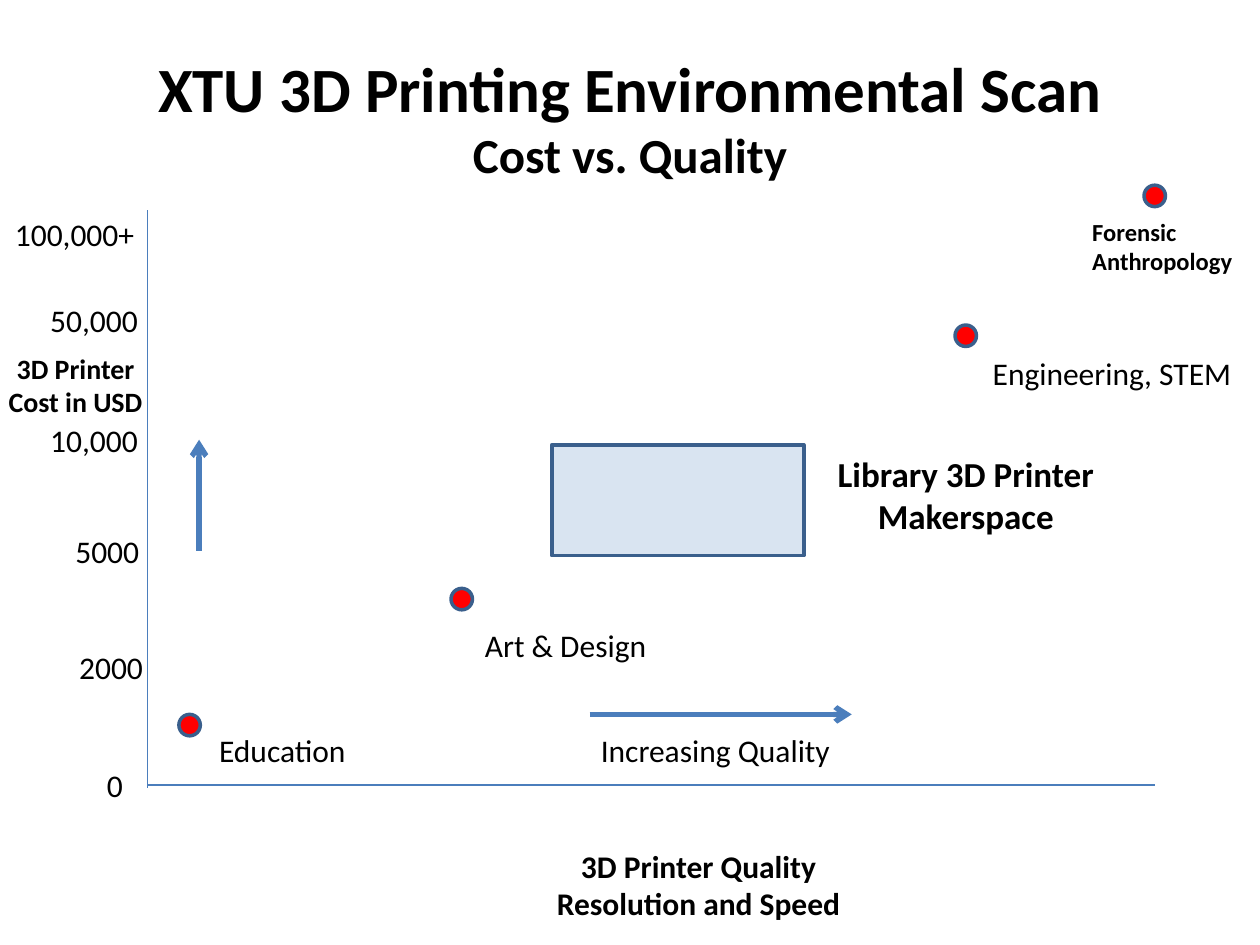
from lxml import etree
from pptx import Presentation
from pptx.dml.color import RGBColor
from pptx.enum.shapes import MSO_CONNECTOR, MSO_SHAPE
from pptx.enum.text import MSO_ANCHOR, PP_ALIGN
from pptx.oxml.ns import qn
from pptx.util import Inches, Pt

LEFT, CENTER = PP_ALIGN.LEFT, PP_ALIGN.CENTER
TOP, MIDDLE = MSO_ANCHOR.TOP, MSO_ANCHOR.MIDDLE
RECT, OVAL = MSO_SHAPE.RECTANGLE, MSO_SHAPE.OVAL
STRAIGHT = MSO_CONNECTOR.STRAIGHT

FONT = "Calibri"
COLORS = {
    "text": "000000",
    "line": "4B7EBC",
    "outline": "3A5F8C",
    "dot": "FF0000",
    "range": "4F81BD",
}
DOT = 0.17
AXIS_X, AXIS_Y = 1.17, 6.23


def rgb(name):
    return RGBColor.from_string(COLORS[name])


def add_text(s, text, x, y, w, h, size=18, bold=False, align=LEFT,
             anchor=TOP, wrap=False, sizes=None):
    tf = s.shapes.add_textbox(Inches(x), Inches(y), Inches(w), Inches(h)).text_frame
    tf.word_wrap = wrap
    tf.vertical_anchor = anchor
    p = tf.paragraphs[0]
    p.alignment = align
    lines = text.split("\n")
    for i, (line, pts) in enumerate(zip(lines, sizes or [size] * len(lines))):
        if i:
            p.add_line_break()
        r = p.add_run()
        r.text = line
        r.font.name = FONT
        r.font.size = Pt(pts)
        r.font.bold = bold
        r.font.color.rgb = rgb("text")


def add_shape(s, kind, x, y, w, h, fill, alpha=None):
    sp = s.shapes.add_shape(kind, Inches(x), Inches(y), Inches(w), Inches(h))
    sp.shadow.inherit = False
    sp.fill.solid()
    sp.fill.fore_color.rgb = rgb(fill)
    sp.line.color.rgb = rgb("outline")
    sp.line.width = Pt(2)
    if alpha:
        clr = sp.fill._xPr.find(qn("a:solidFill"))[0]
        etree.SubElement(clr, qn("a:alpha"), val=str(alpha * 1000))


def add_line(s, x1, y1, x2, y2, width=0.75, arrow=False):
    cn = s.shapes.add_connector(STRAIGHT, Inches(x1), Inches(y1), Inches(x2), Inches(y2))
    cn.line.color.rgb = rgb("line")
    cn.line.width = Pt(width)
    if arrow:
        etree.SubElement(cn.line._get_or_add_ln(), qn("a:tailEnd"), type="arrow")
    etree.SubElement(cn._element.spPr, qn("a:effectLst"))


def add_axes(s):
    add_line(s, AXIS_X, 1.67, AXIS_X, 6.25)
    add_line(s, AXIS_X, AXIS_Y, 9.17, AXIS_Y)
    ticks = [
        ("100,000+", 0.02, 1.66, 1.16),
        ("50,000", 0.3, 2.34, 1),
        ("10,000", 0.3, 3.29, 1),
        ("5000", 0.5, 4.17, 1),
        ("2000", 0.53, 5.09, 1),
        ("0", 0.75, 6.03, 0.42),
    ]
    for text, x, y, w in ticks:
        add_text(s, text, x, y, w, 0.4, wrap=True)
    add_text(s, "3D Printer\nCost in USD", -0.04, 2.74, 1.28, 0.64,
             size=16, bold=True, align=CENTER)
    add_text(s, "3D Printer Quality\nResolution and Speed", 4.31, 6.67, 2.47, 0.71,
             bold=True, align=CENTER)


def add_departments(s):
    for x, y in [(1.42, 5.67), (3.58, 4.67), (7.58, 2.58), (9.08, 1.47)]:
        add_shape(s, OVAL, x, y, DOT, DOT, "dot")
    add_text(s, "Education", 1.64, 5.75, 1.22, 0.4)
    add_text(s, "Art & Design", 3.75, 4.92, 1.5, 0.4)
    add_text(s, "Engineering, STEM", 7.78, 2.76, 2.12, 0.4)
    add_text(s, "Forensic\nAnthropology", 8.57, 1.67, 1.32, 0.57, size=14, bold=True)


def main():
    prs = Presentation()
    prs.slide_width, prs.slide_height = Inches(10), Inches(7.5)
    s = prs.slides.add_slide(prs.slide_layouts[6])
    add_shape(s, RECT, 4.38, 3.53, 2, 0.88, "range", alpha=21)
    add_text(s, "XTU 3D Printing Environmental Scan\nCost vs. Quality", 0.5, 0.3, 9, 1.25,
             bold=True, align=CENTER, anchor=MIDDLE, wrap=True, sizes=[36, 28])
    add_axes(s)
    add_departments(s)
    add_text(s, "Library 3D Printer\nMakerspace", 6.54, 3.54, 2.25, 0.77,
             size=20, bold=True, align=CENTER)
    add_line(s, 4.68, 5.67, 6.76, 5.67, width=3, arrow=True)
    add_text(s, "Increasing Quality", 4.67, 5.75, 2.04, 0.4)
    add_line(s, 1.58, 4.37, 1.58, 3.49, width=3, arrow=True)
    prs.save("out.pptx")


if __name__ == "__main__":
    main()
